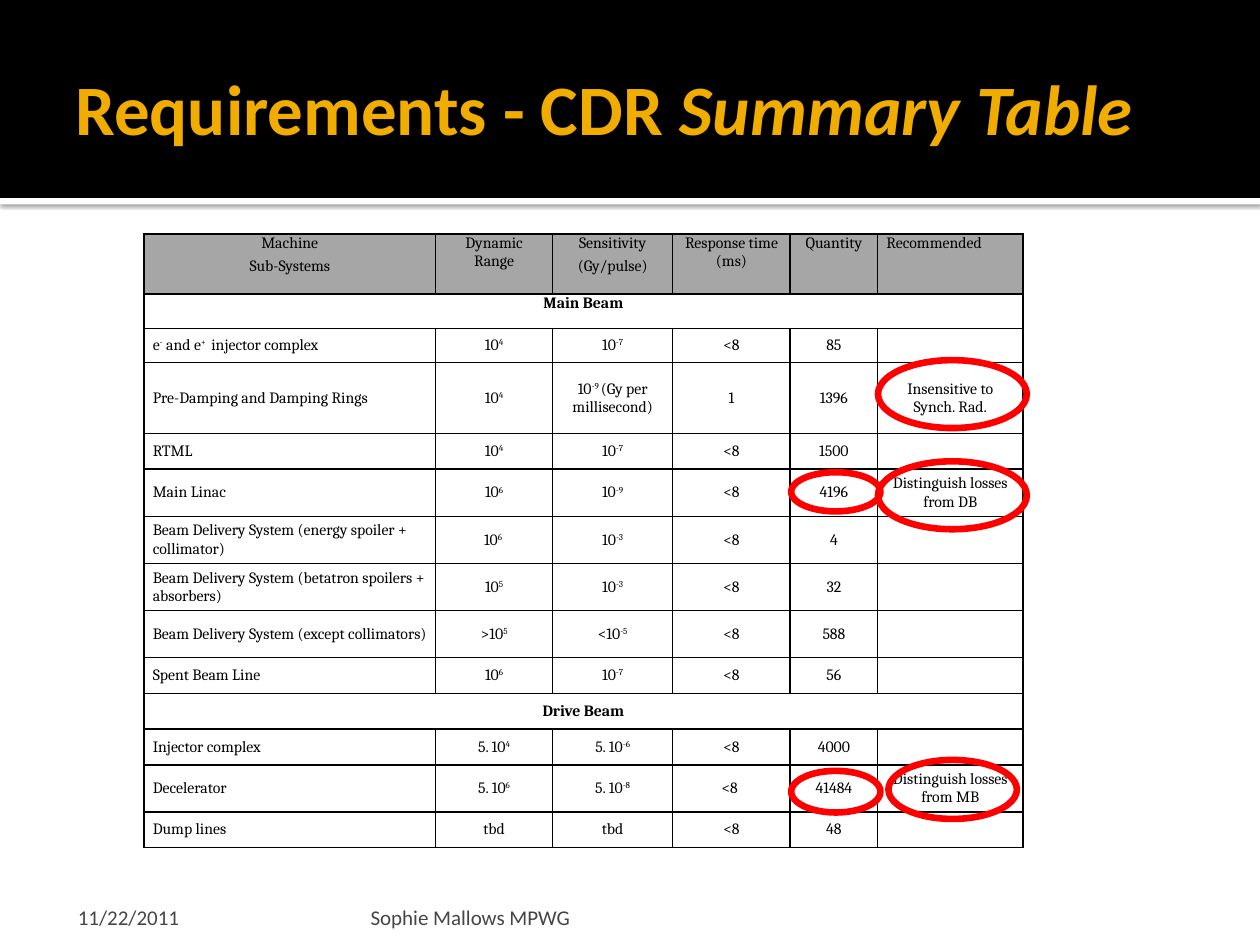
import pptx
import pptx.dml.color
import pptx.enum.shapes
import pptx.enum.text
import pptx.oxml
import pptx.oxml.ns
import pptx.util

Cm, Pt = pptx.util.Cm, pptx.util.Pt
ALIGN = pptx.enum.text.PP_ALIGN
ANCHOR = pptx.enum.text.MSO_ANCHOR
SHAPE = pptx.enum.shapes.MSO_SHAPE

COLORS = {"band": "000000", "title": "F0AD00", "footer": "454545", "text": "000000",
          "header": "A6A6A6", "white": "FFFFFF", "border": "000000", "mark": "FF0000"}

# Text between a pair of ^ is superscript.
HEADER = ["Machine\nSub-Systems", "Dynamic Range", "Sensitivity\n(Gy/pulse)",
          "Response time (ms)", "Quantity", "Recommended"]
SECTIONS = [
    ("Main Beam", 0.69, ANCHOR.TOP, [
        (0.69, "e^-^ and e^+ ^ injector complex", "10^4^", "10^-7^", "<8", "85", ""),
        (1.43, "Pre-Damping and Damping Rings", "10^4^", "10^-9 ^(Gy per millisecond)",
         "1", "1396", "Insensitive to Synch. Rad."),
        (0.72, "RTML", "10^4^", "10^-7^", "<8", "1500", ""),
        (0.95, "Main Linac", "10^6^", "10^-9^", "<8", "4196", "Distinguish losses from DB"),
        (0.95, "Beam Delivery System (energy spoiler + collimator)",
         "10^6 ^", "10^-3^", "<8", "4", ""),
        (0.95, "Beam Delivery System (betatron spoilers + absorbers)",
         "10^5^", "10^-3^", "<8", "32", ""),
        (0.95, "Beam Delivery System (except collimators)",
         ">10^5^", "<10^-5^", "<8", "588", ""),
        (0.72, "Spent Beam Line", "10^6^", "10^-7^", "<8", "56", ""),
    ]),
    ("Drive Beam", 0.72, ANCHOR.MIDDLE, [
        (0.72, "Injector complex", "5. 10^4^", "5. 10^-6^", "<8", "4000", ""),
        (0.95, "Decelerator", "5. 10^6^", "5. 10^-8^", "<8 ", "41484",
         "Distinguish losses from MB"),
        (0.72, "Dump lines", "tbd", "tbd", "<8", "48", ""),
    ]),
]
COLUMN_WIDTHS = [5.88, 2.36, 2.42, 2.37, 1.76, 2.93]
HEADER_HEIGHT = 1.21
TABLE_LEFT, TABLE_TOP = 2.9, 4.72

# left, top, width, height in cm
MARKS = [(15.95, 15.54, 1.8, 0.84), (17.91, 15.32, 2.59, 1.19), (15.95, 9.52, 1.8, 0.79),
         (17.7, 7.26, 3, 1.37), (17.7, 9.3, 3, 1.37)]

TITLE = {"box": (1.27, 0.43, 22.86, 3.48), "insets": (0.25, 0.13, 0.13, 0.13),
         "anchor": ANCHOR.MIDDLE, "color": "title",
         "runs": [("Requirements - CDR ", {"size": Pt(40.5), "bold": True}),
                  ("Summary Table", {"size": Pt(40.5), "bold": True, "italic": True})]}
DATE = {"box": (1.27, 17.98, 5.92, 0.76), "insets": (0.3, 0.13, 0.13, 0),
        "anchor": ANCHOR.BOTTOM, "color": "footer",
        "runs": [("11/22/2011", {"size": Pt(12)})]}
AUTHOR = {"box": (7.34, 17.98, 15.29, 0.76), "insets": (0.13, 0.13, 0.13, 0),
          "anchor": ANCHOR.BOTTOM, "color": "footer",
          "runs": [("Sophie Mallows MPWG", {"size": Pt(12)})]}


def rgb(name):
    return pptx.dml.color.RGBColor.from_string(COLORS[name])


def apply(target, values):
    for name, value in values.items():
        setattr(target, name, value)


def margins(left, top, right, bottom):
    return {"margin_left": Cm(left), "margin_top": Cm(top),
            "margin_right": Cm(right), "margin_bottom": Cm(bottom)}


def add_run(paragraph, text, color, font):
    run = paragraph.add_run()
    run.text = text
    apply(run.font, font)
    run.font.color.rgb = rgb(color)
    return run


def add_shape(slide, kind, box, fill=None):
    shape = slide.shapes.add_shape(kind, *map(Cm, box))
    shape.shadow.inherit = False
    if fill:
        shape.fill.solid()
        shape.fill.fore_color.rgb = rgb(fill)
        shape.line.fill.background()
    else:
        shape.fill.background()
    return shape


def add_text(slide, part):
    frame = slide.shapes.add_textbox(*map(Cm, part["box"])).text_frame
    apply(frame, {"word_wrap": True, "vertical_anchor": part["anchor"],
                  **margins(*part["insets"])})
    for text, font in part["runs"]:
        add_run(frame.paragraphs[0], text, part["color"], {"name": "Calibri", **font})


def add_bar_shadow(bar):
    effects = bar._element.spPr.find(pptx.oxml.ns.qn("a:effectLst"))
    effects.append(pptx.oxml.parse_xml(
        f'<a:outerShdw {pptx.oxml.ns.nsdecls("a")} blurRad="{Pt(2.5)}" dist="{Pt(0.8)}" '
        'dir="5400000" algn="tl" rotWithShape="0"><a:srgbClr val="000000">'
        '<a:alpha val="60000"/></a:srgbClr></a:outerShdw>'))


def set_borders(cell):
    properties = cell._tc.get_or_add_tcPr()
    for index, side in enumerate(("lnL", "lnR", "lnT", "lnB")):
        properties.insert(index, pptx.oxml.parse_xml(
            f'<a:{side} {pptx.oxml.ns.nsdecls("a")} w="{Pt(1)}"><a:solidFill>'
            f'<a:srgbClr val="{COLORS["border"]}"/></a:solidFill></a:{side}>'))


def fill_cell(cell, text, align, anchor=ANCHOR.MIDDLE, fill="white", before=6, bold=False):
    apply(cell, {"vertical_anchor": anchor, **margins(0.18, 0, 0.18, 0)})
    cell.fill.solid()
    cell.fill.fore_color.rgb = rgb(fill)
    set_borders(cell)
    font = {"name": "Cambria", "size": Pt(9), "bold": bold}
    for index, line in enumerate(text.split("\n")):
        frame = cell.text_frame
        paragraph = frame.add_paragraph() if index else frame.paragraphs[0]
        apply(paragraph, {"alignment": align, "space_before": Pt(before)})
        for position, piece in enumerate(line.split("^")):
            if piece:
                run = add_run(paragraph, piece, "text", font)
                if position % 2:
                    run._r.get_or_add_rPr().set("baseline", "30000")
        paragraph._p.get_or_add_endParaRPr().set("sz", "900")


def add_requirements(slide):
    heights = [HEADER_HEIGHT]
    for _, height, _, systems in SECTIONS:
        heights += [height] + [system[0] for system in systems]
    table = slide.shapes.add_table(
        len(heights), len(COLUMN_WIDTHS), Cm(TABLE_LEFT), Cm(TABLE_TOP),
        Cm(sum(COLUMN_WIDTHS)), Cm(sum(heights))).table
    apply(table, {"first_row": False, "horz_banding": False})
    for column, width in zip(table.columns, COLUMN_WIDTHS):
        column.width = Cm(width)
    for row, height in zip(table.rows, heights):
        row.height = Cm(height)

    last = len(COLUMN_WIDTHS) - 1
    for column, text in enumerate(HEADER):
        align = ALIGN.JUSTIFY if column == last else ALIGN.CENTER
        fill_cell(table.cell(0, column), text, align, ANCHOR.TOP, "header", before=3)
    row = 1
    for section, _, anchor, systems in SECTIONS:
        for column in range(last + 1):
            fill_cell(table.cell(row, column), "" if column else section,
                      ALIGN.CENTER, anchor, bold=True)
        table.cell(row, 0).merge(table.cell(row, last))
        for row, (_, *values) in enumerate(systems, row + 1):
            for column, text in enumerate(values):
                fill_cell(table.cell(row, column), text,
                          ALIGN.CENTER if column else ALIGN.LEFT)
        row += 1


def main():
    deck = pptx.Presentation()
    apply(deck, {"slide_width": Cm(25.4), "slide_height": Cm(19.05)})
    slide = deck.slides.add_slide(deck.slide_layouts[6])
    add_bar_shadow(add_shape(slide, SHAPE.RECTANGLE, (0, 3.99, 25.4, 0.13), "white"))
    add_shape(slide, SHAPE.RECTANGLE, (0, 0, 25.4, 3.99), "band")
    for part in (TITLE, DATE, AUTHOR):
        add_text(slide, part)
    add_requirements(slide)
    for box in MARKS:
        mark = add_shape(slide, SHAPE.OVAL, box)
        mark.line.color.rgb = rgb("mark")
        mark.line.width = Pt(3.78)
    deck.save("out.pptx")


if __name__ == "__main__":
    main()
